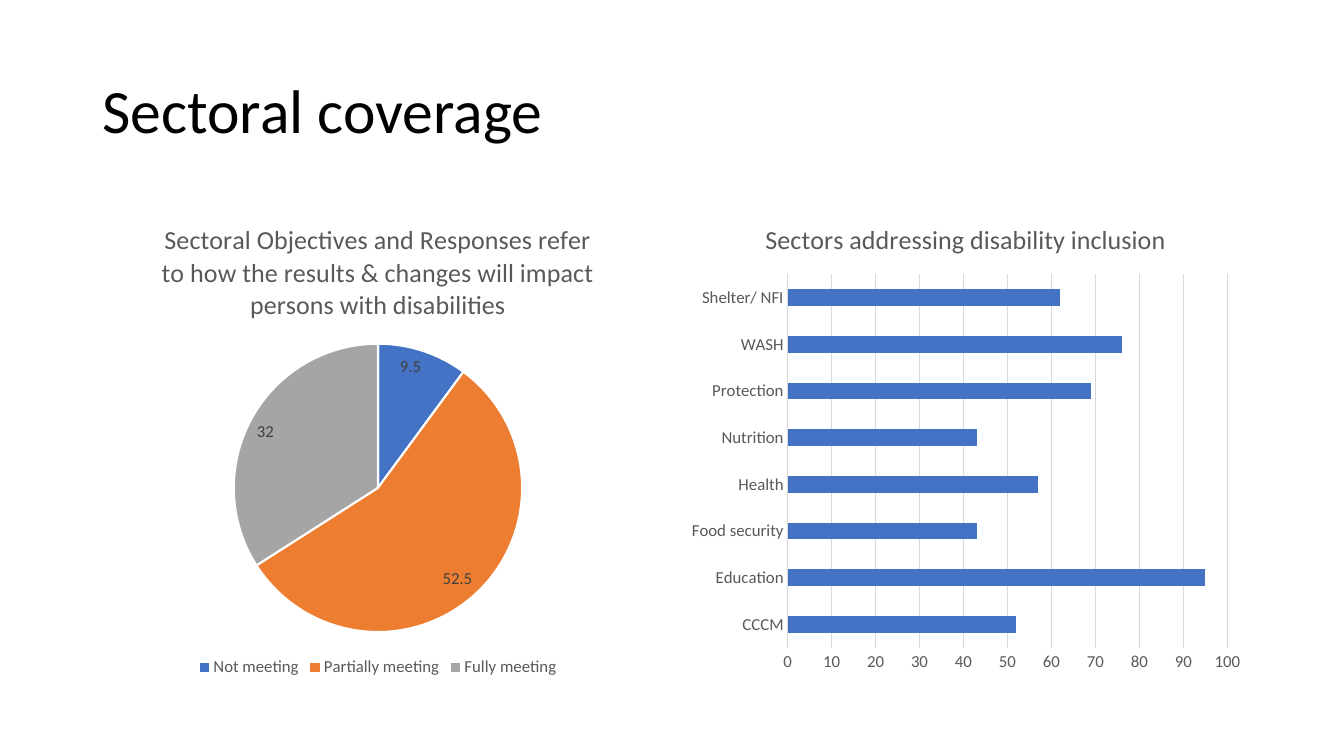
from pptx import Presentation
from pptx.chart.data import CategoryChartData
from pptx.dml.color import RGBColor
from pptx.enum.chart import XL_CHART_TYPE as ChartType
from pptx.enum.chart import XL_LABEL_POSITION as LabelPosition
from pptx.enum.chart import XL_LEGEND_POSITION as LegendPosition
from pptx.enum.chart import XL_TICK_MARK as TickMark
from pptx.enum.text import MSO_ANCHOR, MSO_AUTO_SIZE, PP_ALIGN
from pptx.util import Pt

BLACK = RGBColor(0x00, 0x00, 0x00)
WHITE = RGBColor(0xFF, 0xFF, 0xFF)
DARK_GREY = RGBColor(0x40, 0x40, 0x40)
TEXT_GREY = RGBColor(0x59, 0x59, 0x59)
LINE_GREY = RGBColor(0xD9, 0xD9, 0xD9)
BLUE = RGBColor(0x44, 0x72, 0xC4)
ORANGE = RGBColor(0xED, 0x7D, 0x31)
GREY = RGBColor(0xA5, 0xA5, 0xA5)

MARGIN = 66
CONTENT_WIDTH = 828
CHART_TOP, CHART_WIDTH, CHART_HEIGHT = 144, 408, 342.6

IMPACT = {"Not meeting": 9.5, "Partially meeting": 52.5, "Fully meeting": 32}
SECTORS = {
    "CCCM": 52,
    "Education": 95,
    "Food security": 43,
    "Health": 57,
    "Nutrition": 43,
    "Protection": 69,
    "WASH": 76,
    "Shelter/ NFI": 62,
}


class SlideBuilder:
    typeface = "Calibri"

    def __init__(self, slide):
        self.slide = slide

    def style(self, font, size, color):
        font.name = self.typeface
        font.size = Pt(size)
        font.bold = False
        font.color.rgb = color

    def title(self, text):
        heading = self.slide.shapes.title
        heading.left, heading.top = Pt(MARGIN), Pt(28.75)
        heading.width, heading.height = Pt(CONTENT_WIDTH), Pt(104.4)
        frame = heading.text_frame
        frame.text = text
        frame.auto_size = MSO_AUTO_SIZE.NONE
        frame.vertical_anchor = MSO_ANCHOR.MIDDLE
        line = frame.paragraphs[0]
        line.alignment = PP_ALIGN.LEFT
        line.line_spacing = 0.9
        self.style(line.font, 44, BLACK)

    def chart(self, kind, left, name, values):
        data = CategoryChartData()
        data.categories = list(values)
        data.add_series(name, list(values.values()))
        chart = self.slide.shapes.add_chart(
            kind, Pt(left), Pt(CHART_TOP), Pt(CHART_WIDTH), Pt(CHART_HEIGHT), data
        ).chart
        self.style(chart.font, 10, BLACK)
        chart.has_title = True
        chart.chart_title.include_in_layout = False
        chart.chart_title.text_frame.text = name
        self.style(chart.chart_title.text_frame.paragraphs[0].font, 18.6, TEXT_GREY)
        return chart

    def pie(self, left, name, values, colors):
        chart = self.chart(ChartType.PIE, left, name, values)
        plot = chart.plots[0]
        plot.vary_by_categories = True
        for index, color in enumerate(colors):
            slice_format = plot.series[0].points[index].format
            slice_format.fill.solid()
            slice_format.fill.fore_color.rgb = color
            slice_format.line.color.rgb = WHITE
            slice_format.line.width = Pt(1.5)
        plot.has_data_labels = True
        labels = plot.data_labels
        labels.show_value = True
        labels.show_percentage = False
        labels.position = LabelPosition.INSIDE_END
        self.style(labels.font, 12, DARK_GREY)
        chart.has_legend = True
        chart.legend.position = LegendPosition.BOTTOM
        chart.legend.include_in_layout = False
        self.style(chart.legend.font, 12, TEXT_GREY)

    def bars(self, left, name, values, color):
        chart = self.chart(ChartType.BAR_CLUSTERED, left, name, values)
        chart.has_legend = False
        plot = chart.plots[0]
        plot.vary_by_categories = False
        plot.gap_width = 182
        fill = plot.series[0].format.fill
        fill.solid()
        fill.fore_color.rgb = color
        sectors, scale = chart.category_axis, chart.value_axis
        for axis in (sectors, scale):
            axis.major_tick_mark = axis.minor_tick_mark = TickMark.NONE
            self.style(axis.tick_labels.font, 12, TEXT_GREY)
        scale.minimum_scale, scale.maximum_scale, scale.major_unit = 0, 100, 10
        scale.format.line.fill.background()
        scale.has_major_gridlines = True
        for line in (sectors.format.line, scale.major_gridlines.format.line):
            line.color.rgb = LINE_GREY
            line.width = Pt(0.75)


def main():
    deck = Presentation()
    deck.slide_width, deck.slide_height = Pt(960), Pt(540)
    builder = SlideBuilder(deck.slides.add_slide(deck.slide_layouts[5]))
    builder.title("Sectoral coverage")
    builder.pie(
        MARGIN,
        "Sectoral Objectives and Responses refer to how the results & changes "
        "will impact persons with disabilities",
        IMPACT,
        (BLUE, ORANGE, GREY),
    )
    builder.bars(
        MARGIN + CONTENT_WIDTH - CHART_WIDTH,
        "Sectors addressing disability inclusion",
        SECTORS,
        BLUE,
    )
    deck.save("out.pptx")


if __name__ == "__main__":
    main()
